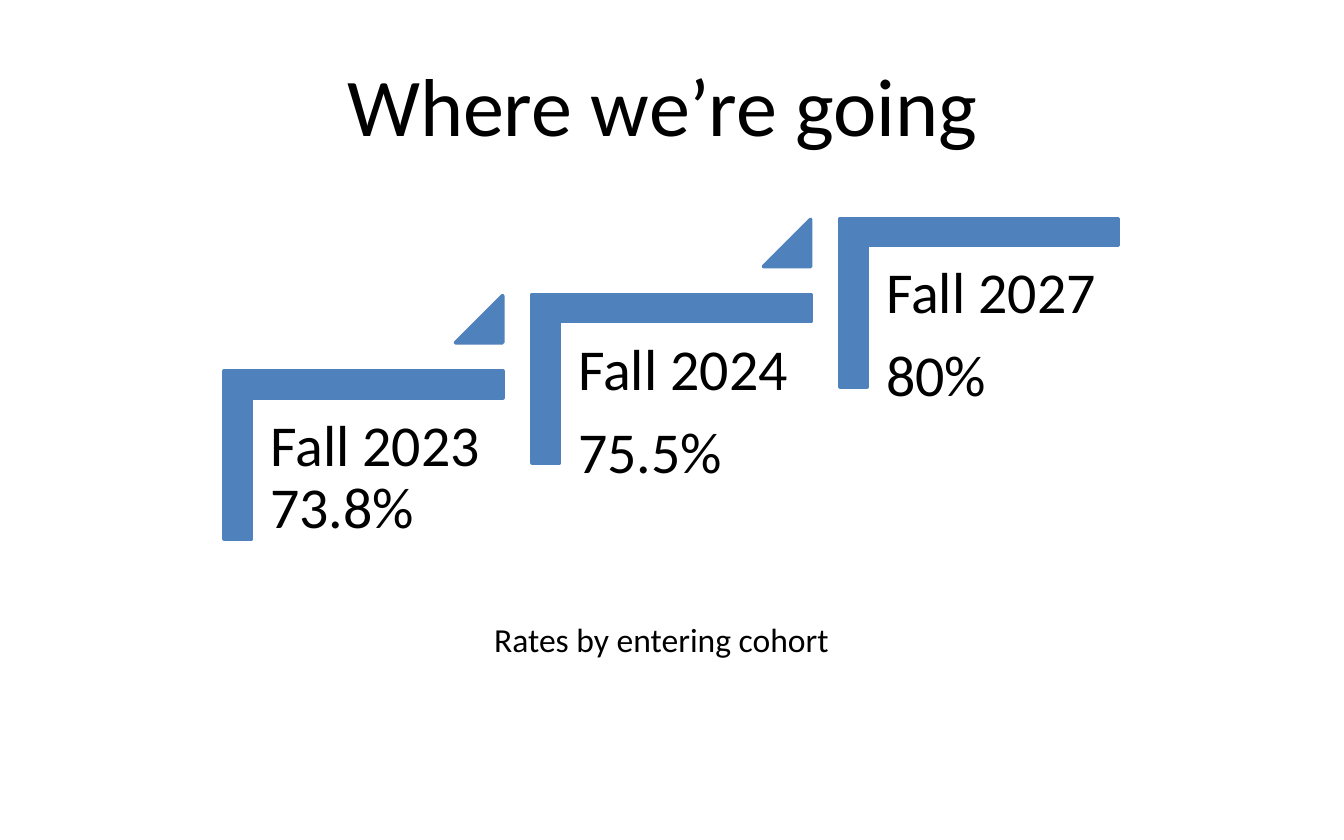
from typing import NamedTuple

from pptx import Presentation
from pptx import util as u
from pptx.dml.color import RGBColor
from pptx.enum import shapes, text

BLUE = RGBColor(0x4F, 0x81, 0xBD)
BLACK = RGBColor(0, 0, 0)
FONT = "Calibri"
RUN, RISE = 5.82, 1.44  # offset from one step to the next, cm


class Box(NamedTuple):
    left: float
    top: float
    width: float
    height: float

    def shift(self, n: int) -> "Box":
        return self._replace(left=self.left + n * RUN, top=self.top - n * RISE)

    def cm(self) -> list[u.Length]:
        return [u.Cm(side) for side in self]


class Step(NamedTuple):
    label: str
    arrow: bool = True


# Places of the first step's parts
CORNER = Box(5.28, 5.97, 3.18, 5.26)
LABEL = Box(4.78, 7.54, 4.75, 4.17)
ARROW = Box(8.61, 5.59, 0.89, 0.89)

STEPS = [
    Step("Fall 2023 73.8%"),
    Step("Fall 2024\n75.5%"),
    Step("Fall 2027\n80%", arrow=False),
]


def add_text(slide, box: Box, words: str, size: int, inset: float = 0.25):
    frame = slide.shapes.add_textbox(*box.cm()).text_frame
    frame.word_wrap = True
    frame.margin_left = frame.margin_right = u.Cm(inset)
    frame.margin_top = frame.margin_bottom = u.Cm(min(inset, 0.33) if inset > 0.25 else 0.13)
    frame.text = words
    for para in frame.paragraphs:
        for run in para.runs:
            run.font.name = FONT
            run.font.size = u.Pt(size)
            run.font.color.rgb = BLACK
    return frame


def add_solid(slide, kind: shapes.MSO_SHAPE, box: Box, adjust: list[float], turn: int = 0) -> None:
    shape = slide.shapes.add_shape(kind, *box.cm())
    shape.rotation = turn
    for i, value in enumerate(adjust):
        shape.adjustments[i] = value
    shape.shadow.inherit = False
    shape.fill.solid()
    shape.fill.fore_color.rgb = BLUE
    shape.line.color.rgb = BLUE
    shape.line.width = u.Pt(2)


def add_step(slide, n: int, step: Step) -> None:
    add_solid(slide, shapes.MSO_SHAPE.CORNER, CORNER.shift(n), [0.161, 0.161], 90)
    frame = add_text(slide, LABEL.shift(n), step.label, 31, 0.33)
    for para in frame.paragraphs:
        para.line_spacing = 0.9
        para.space_after = u.Pt(11)
    if step.arrow:
        add_solid(slide, shapes.MSO_SHAPE.ISOSCELES_TRIANGLE, ARROW.shift(n), [1])


def main() -> None:
    deck = Presentation()
    deck.slide_width, deck.slide_height = u.Cm(25.4), u.Cm(15.88)
    slide = deck.slides.add_slide(deck.slide_layouts[6])

    # Title
    title = add_text(slide, Box(1.27, 0.64, 22.86, 2.64), "Where we’re going ", 44)
    title.vertical_anchor = text.MSO_ANCHOR.MIDDLE
    title.paragraphs[0].alignment = text.PP_ALIGN.CENTER

    # Rising steps
    for n, step in enumerate(STEPS):
        add_step(slide, n, step)

    # Caption
    note = add_text(slide, Box(9.09, 11.58, 8.89, 1.02), "Rates by entering cohort", 18)
    note.auto_size = text.MSO_AUTO_SIZE.SHAPE_TO_FIT_TEXT

    deck.save("out.pptx")


if __name__ == "__main__":
    main()
